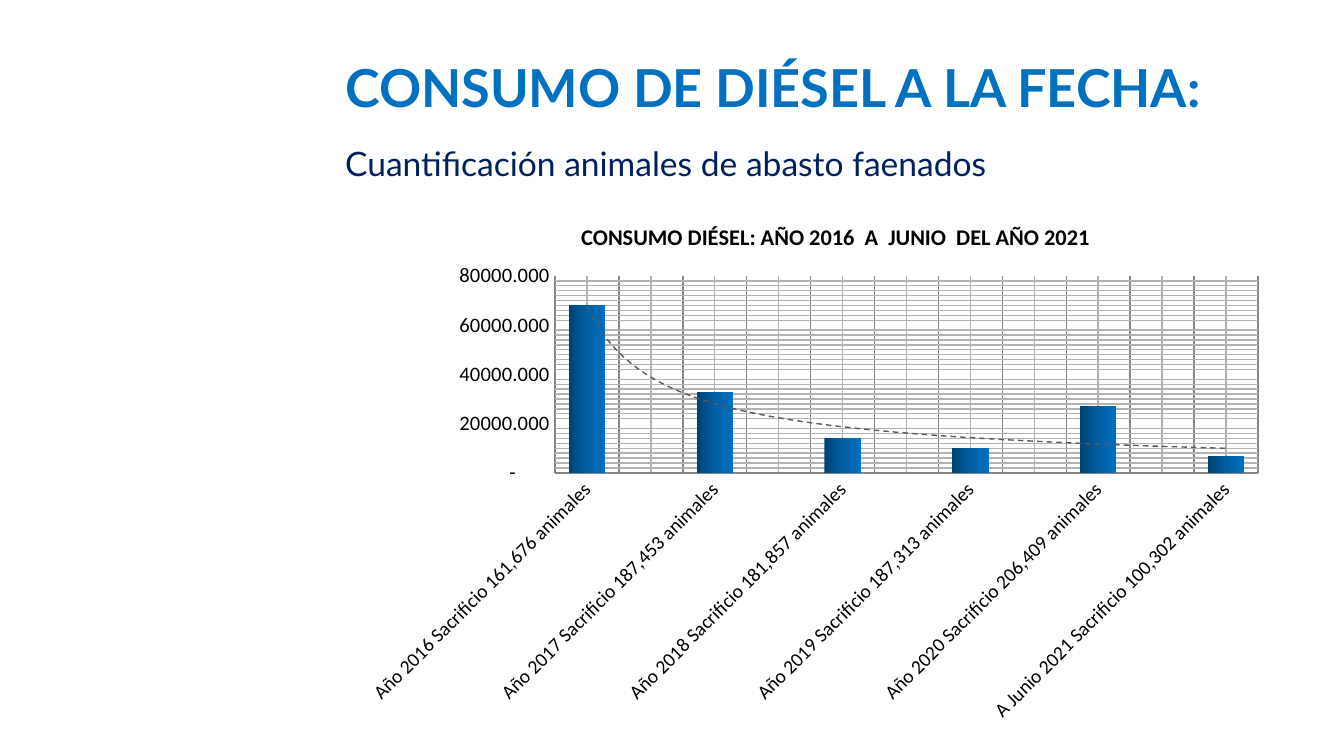
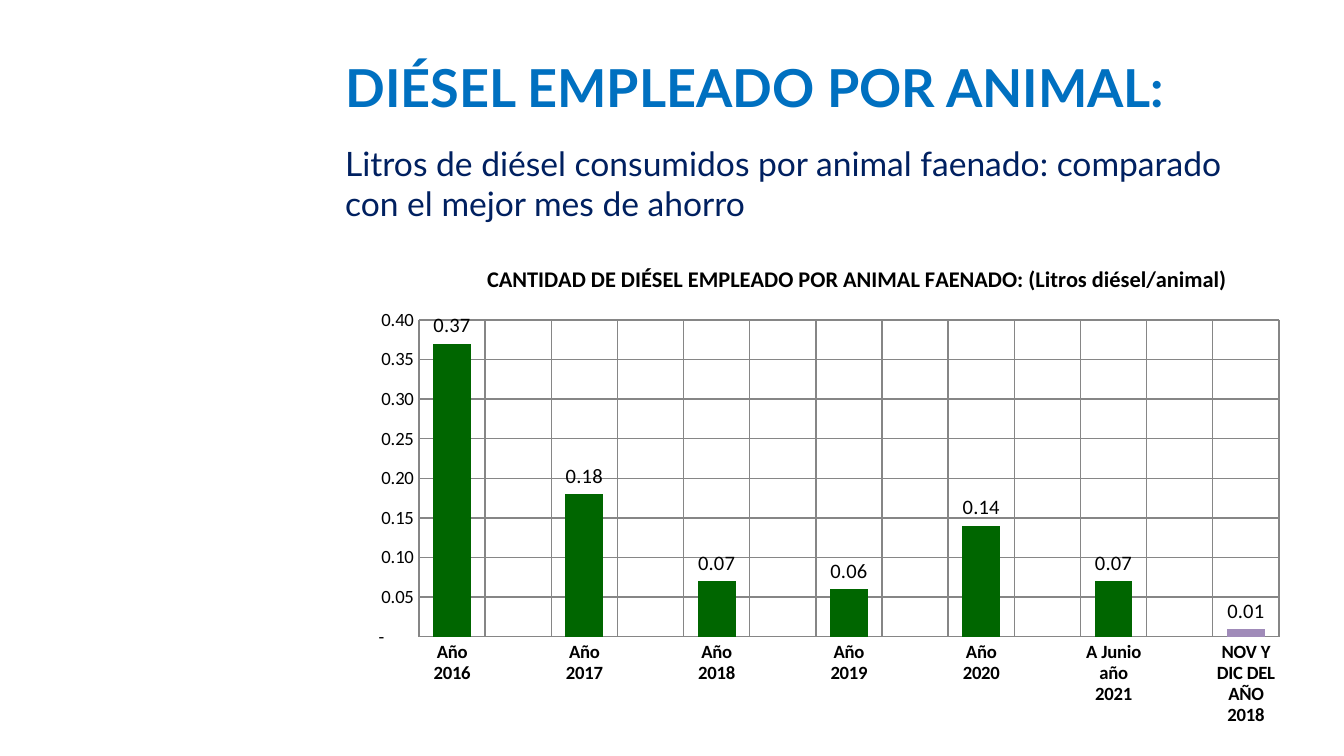
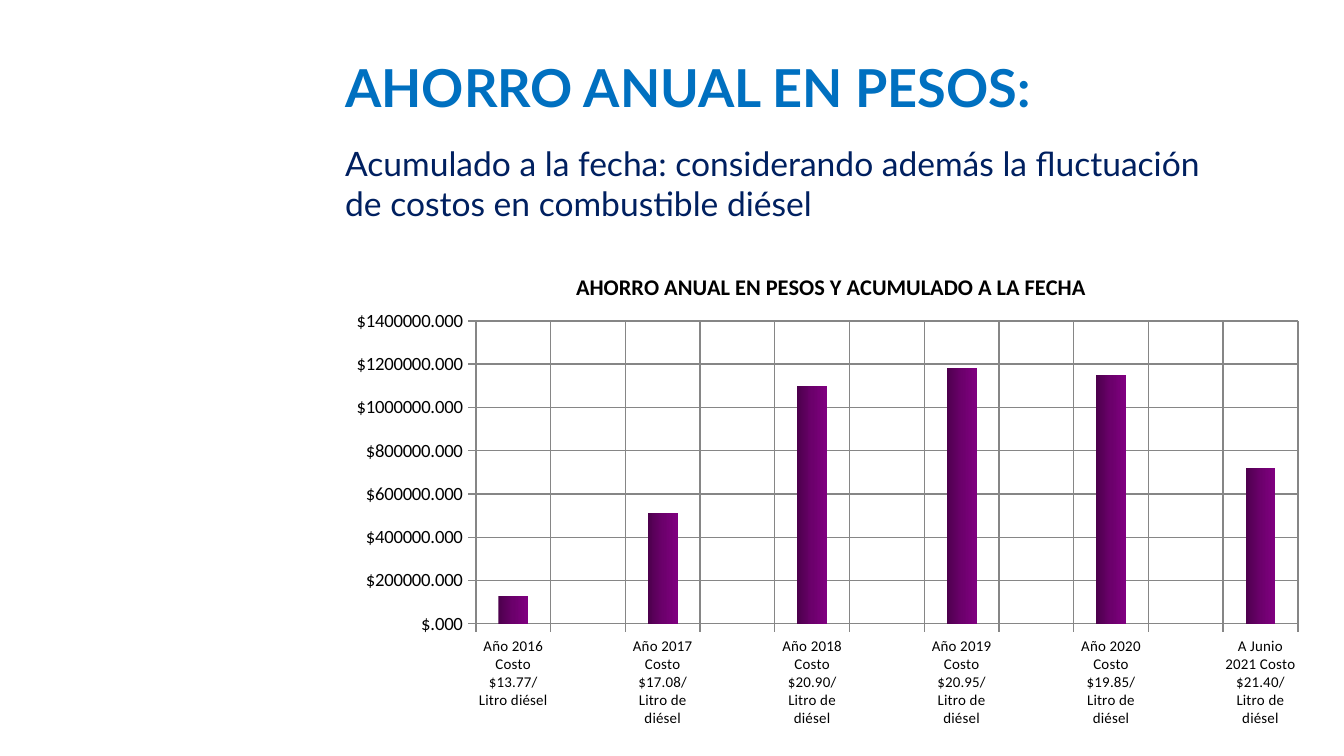
import copy
import pptx
import pptx.chart.data
import pptx.dml.color
import pptx.enum.chart
import pptx.enum.text
import pptx.oxml
import pptx.oxml.ns
import pptx.util

RGB = pptx.dml.color.RGBColor
TICK = pptx.enum.chart.XL_TICK_MARK
PX = 914400 / 134.4
SIZE = (1344, 756)
HEAD = (332, 24, 943, 126)
SUB = (332, 136, 926, 145)
BLUE = RGB(0x00, 0x70, 0xC0)
NAVY = RGB(0x00, 0x20, 0x60)
BLACK = RGB(0x00, 0x00, 0x00)
GREEN = RGB(0x00, 0x66, 0x00)
LILAC = RGB(0xA0, 0x8B, 0xB9)
GRAY = RGB(0x86, 0x86, 0x86)
PALE = RGB(0xB3, 0xB3, 0xB3)
DARK = RGB(0x59, 0x59, 0x59)
BLUES = (RGB(0x00, 0x42, 0x72), RGB(0x00, 0x5E, 0xA2), BLUE)
PLUMS = (RGB(0x4C, 0x00, 0x4C), RGB(0x6C, 0x00, 0x6C), RGB(0x80, 0x00, 0x80))

PAGES = [
    {
        "head": "CONSUMO DE DIÉSEL A LA FECHA:",
        "sub": "Cuantificación animales de abasto faenados",
        "title": "CONSUMO DIÉSEL: AÑO 2016  A  JUNIO  DEL AÑO 2021",
        "box": (349, 194, 926, 540), "name": (228, 24), "plot": (206, 82, 703, 197),
        "bars": [
            ("Año 2016 Sacrificio 161,676 animales", 68000),
            ("Año 2017 Sacrificio 187,453 animales", 33000),
            ("Año 2018 Sacrificio 181,857 animales", 14000),
            ("Año 2019 Sacrificio 187,313 animales", 10000),
            ("Año 2020 Sacrificio 206,409 animales", 27000),
            ("A Junio 2021 Sacrificio 100,302 animales", 7000),
        ],
        "fill": BLUES, "gap": 75, "lap": -25, "turn": -45,
        "scale": {"maximum_scale": 80000, "major_unit": 20000, "minor_unit": 2000},
        "form": '0.000;-0.000;"-"???', "tick": TICK.NONE, "fine": True,
        "cat": {"size": pptx.util.Pt(10.5)}, "val": {"size": pptx.util.Pt(11)},
    },
    {
        "head": "DIÉSEL EMPLEADO POR ANIMAL:",
        "sub": "Litros de diésel consumidos por animal faenado: comparado con el mejor mes de ahorro",
        "title": "CANTIDAD DE DIÉSEL EMPLEADO POR ANIMAL FAENADO: (Litros diésel/animal)",
        "box": (355, 242, 943, 495), "name": (128, 18), "plot": (64, 78, 860, 317),
        "bars": [
            ("Año 2016", 0.37), ("Año 2017", 0.18), ("Año 2018", 0.07),
            ("Año 2019", 0.06), ("Año 2020", 0.14), ("A Junio año 2021", 0.07),
            ("NOV Y DIC DEL AÑO 2018", 0.01),
        ],
        "fill": (GREEN,), "last": LILAC, "gap": 75, "lap": -25, "turn": 0,
        "scale": {"maximum_scale": 0.4, "major_unit": 0.05},
        "form": '0.00;-0.00;"-"???', "tick": TICK.NONE, "fine": False,
        "cat": {"size": pptx.util.Pt(10), "bold": True}, "val": {"size": pptx.util.Pt(10)},
    },
    {
        "head": "AHORRO ANUAL EN PESOS:",
        "sub": "Acumulado a la fecha: considerando además la fluctuación de costos en combustible diésel",
        "title": "AHORRO ANUAL EN PESOS Y ACUMULADO A LA FECHA",
        "box": (337, 245, 978, 495), "name": (235, 23), "plot": (139, 76, 822, 303),
        "bars": [
            ("Año 2016 Costo $13.77/Litro diésel", 130000),
            ("Año 2017 Costo $17.08/Litro de diésel", 510000),
            ("Año 2018 Costo $20.90/Litro de diésel", 1100000),
            ("Año 2019 Costo $20.95/Litro de diésel", 1180000),
            ("Año 2020 Costo $19.85/Litro de diésel", 1150000),
            ("A Junio 2021 Costo $21.40/Litro de diésel", 720000),
        ],
        "fill": PLUMS, "gap": 150, "lap": 0, "turn": 0,
        "scale": {"maximum_scale": 1400000, "major_unit": 200000},
        "form": '"$"#.000', "tick": TICK.OUTSIDE, "fine": False,
        "cat": {"size": pptx.util.Pt(8)}, "val": {"size": pptx.util.Pt(10)},
    },
]


def emu(box):
    """Turn px lengths into EMU."""
    return [round(n * PX) for n in box]


def put(thing, look):
    """Set each attribute named in a dict."""
    for key, val in look.items():
        setattr(thing, key, val)


def style(font, color, **look):
    """Colour a font and set its other values."""
    font.color.rgb = color
    put(font, look)


def write(shape, box, text, anchor, color, **look):
    """Place a shape and fill it with one styled paragraph."""
    put(shape, dict(zip(("left", "top", "width", "height"), emu(box))))
    frame = shape.text_frame
    put(frame, {"word_wrap": True, "vertical_anchor": anchor,
                "auto_size": pptx.enum.text.MSO_AUTO_SIZE.NONE})
    para = frame.paragraphs[0]
    para.alignment = pptx.enum.text.PP_ALIGN.LEFT
    run = para.add_run()
    run.text = text
    style(run.font, color, name="Lato", **look)


def fix(host, spot, box, size):
    """Give a chart part a manual layout in px of the chart box."""
    for old in host.xpath("./c:layout"):
        host.remove(old)
    inner = '<c:layoutTarget val="inner"/>' if len(box) == 4 else ""
    modes = '<c:xMode val="edge"/><c:yMode val="edge"/>'
    parts = "".join(
        f'<c:{tag} val="{n / full:.4f}"/>' for tag, n, full in zip("xywh", box, size * 2))
    host.insert(spot, pptx.oxml.parse_xml(
        f'<c:layout {pptx.oxml.ns.nsdecls("c")}><c:manualLayout>'
        f"{inner}{modes}{parts}</c:manualLayout></c:layout>"))


def paint(series, colors):
    """Fill the bars with one colour or an even gradient."""
    fill = series.format.fill
    if len(colors) == 1:
        fill.solid()
        fill.fore_color.rgb = colors[0]
        return
    fill.gradient()
    fill.gradient_angle = 0
    stop = series._element.xpath(".//a:gs")[0]
    stop.addnext(copy.deepcopy(stop))
    for i, (stop, color) in enumerate(zip(fill.gradient_stops, colors)):
        stop.position = i / (len(colors) - 1)
        stop.color.rgb = color


def stroke(color, dash):
    """Make the XML for a thin line."""
    return pptx.oxml.parse_xml(
        f'<c:spPr {pptx.oxml.ns.nsdecls("c", "a")}><a:ln w="9525"><a:solidFill>'
        f'<a:srgbClr val="{color}"/></a:solidFill><a:prstDash val="{dash}"/></a:ln></c:spPr>')


def trend(series):
    """Add a dashed power trend line."""
    line = pptx.oxml.parse_xml(
        f'<c:trendline {pptx.oxml.ns.nsdecls("c")}><c:trendlineType val="power"/>'
        '<c:dispRSqr val="0"/><c:dispEq val="0"/></c:trendline>')
    line.insert(0, stroke(DARK, "dash"))
    series._element.xpath("./c:cat")[0].addprevious(line)


def rule(line, color):
    """Draw a thin line in one colour."""
    line.color.rgb = color
    line.width = pptx.util.Pt(0.75)


def axes(chart, page):
    """Format both axes and their grids."""
    for axis, look in ((chart.category_axis, page["cat"]), (chart.value_axis, page["val"])):
        put(axis, {"major_tick_mark": page["tick"], "minor_tick_mark": TICK.NONE,
                   "has_major_gridlines": True, "has_minor_gridlines": page["fine"]})
        rule(axis.format.line, GRAY)
        rule(axis.major_gridlines.format.line, GRAY)
        for grid in axis._element.xpath("./c:minorGridlines"):
            grid.append(stroke(PALE, "solid"))
        style(axis.tick_labels.font, BLACK, name="Calibri", **look)
    turn = chart.category_axis._element.xpath("./c:txPr/a:bodyPr")[0]
    turn.set("rot", str(page["turn"] * 60000))
    axis = chart.value_axis
    put(axis, {"minimum_scale": 0, "has_major_gridlines": not page["fine"], **page["scale"]})
    put(axis.tick_labels, {"number_format": page["form"], "number_format_is_linked": False})
    if page["tick"] == TICK.NONE:
        axis.format.line.fill.background()


def graph(slide, box, page):
    """Add a column chart with an empty slot between bars."""
    data = pptx.chart.data.CategoryChartData()
    slots = [slot for bar in page["bars"] for slot in (bar, ("", None))][:-1]
    data.categories = [name for name, _ in slots]
    data.add_series("Series 1", [val for _, val in slots])
    kind = pptx.enum.chart.XL_CHART_TYPE.COLUMN_CLUSTERED
    chart = slide.shapes.add_chart(kind, *emu(box), data).chart
    put(chart, {"has_legend": False, "has_title": True})
    style(chart.font, BLACK, name="Calibri", size=pptx.util.Pt(10))
    frame = chart.chart_title.text_frame
    frame.text = page["title"]
    style(frame.paragraphs[0].runs[0].font, BLACK,
          name="Calibri", size=pptx.util.Pt(12), bold=True)
    fix(chart.element.xpath("./c:chart/c:title")[0], 1, page["name"], box[2:])
    fix(chart.element.xpath(".//c:plotArea")[0], 0, page["plot"], box[2:])
    plot = chart.plots[0]
    put(plot, {"gap_width": page["gap"], "overlap": page["lap"], "vary_by_categories": False})
    series = plot.series[0]
    series.invert_if_negative = False
    paint(series, page["fill"])
    axes(chart, page)
    if page["fine"]:
        trend(series)
    if "last" in page:
        fill = series.points[len(slots) - 1].format.fill
        fill.solid()
        fill.fore_color.rgb = page["last"]
        plot.has_data_labels = True
        put(plot.data_labels, {
            "show_value": True, "number_format": "0.00", "number_format_is_linked": False,
            "position": pptx.enum.chart.XL_LABEL_POSITION.OUTSIDE_END})
        style(plot.data_labels.font, BLACK, name="Calibri", size=pptx.util.Pt(11))


def build(deck, page):
    """Add a slide with title, subtitle and chart."""
    slide = deck.slides.add_slide(deck.slide_layouts[5])
    anchor = pptx.enum.text.MSO_ANCHOR
    write(slide.shapes.title, HEAD, page["head"], anchor.MIDDLE, BLUE,
          size=pptx.util.Pt(28), bold=True)
    write(slide.shapes.add_textbox(*emu(SUB)), SUB, page["sub"], anchor.TOP, NAVY,
          size=pptx.util.Pt(18))
    graph(slide, page["box"], page)


def main():
    """Build and save the deck."""
    deck = pptx.Presentation()
    put(deck, dict(zip(("slide_width", "slide_height"), emu(SIZE))))
    for page in PAGES:
        build(deck, page)
    deck.save("out.pptx")


if __name__ == "__main__":
    main()
